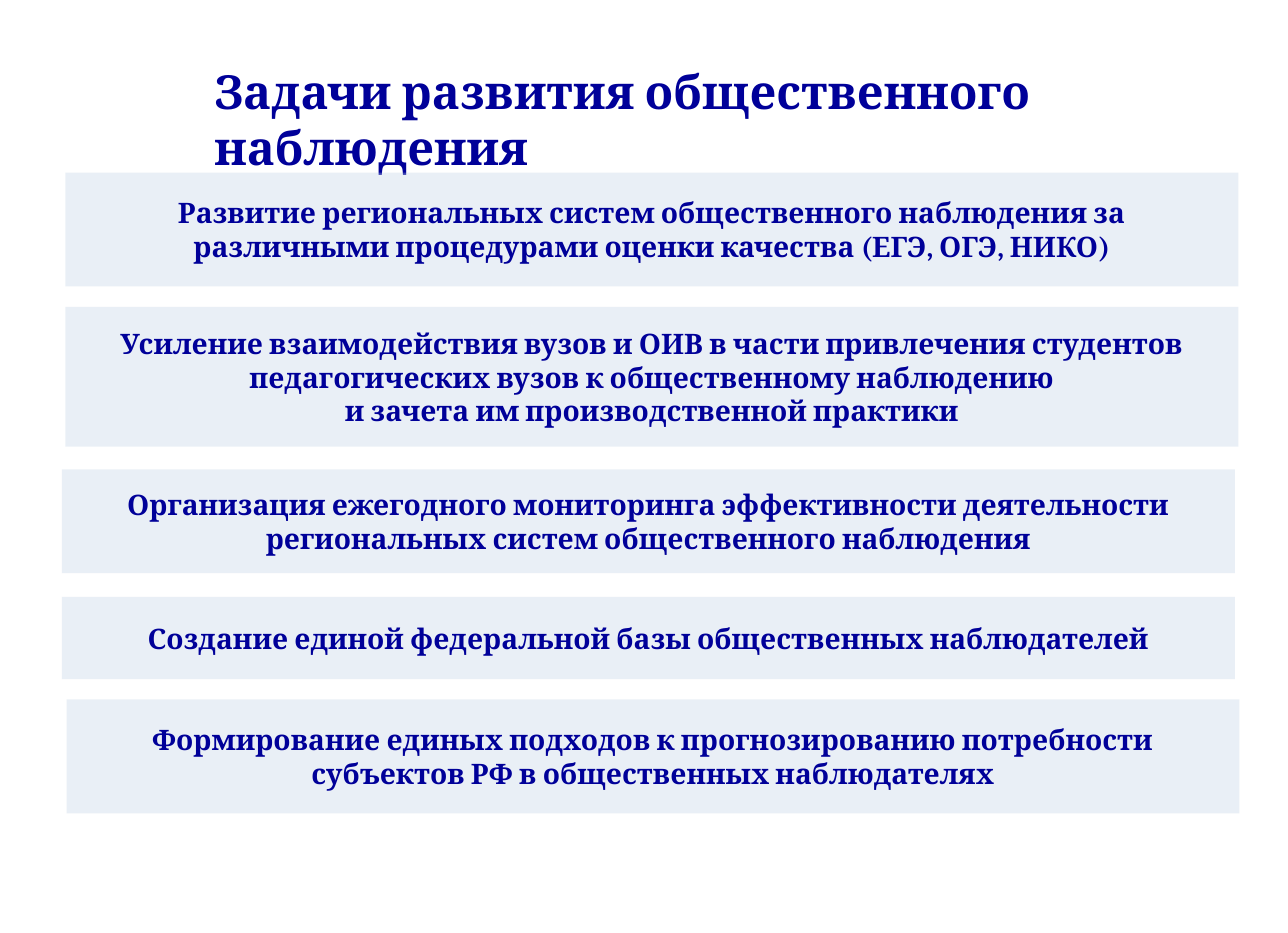
from dataclasses import dataclass

from lxml import etree
from pptx import Presentation
from pptx.dml.color import RGBColor
from pptx.enum.shapes import MSO_SHAPE
from pptx.enum.text import MSO_ANCHOR, MSO_AUTO_SIZE, PP_ALIGN
from pptx.oxml.ns import qn
from pptx.util import Inches, Pt

RECTANGLE = MSO_SHAPE.RECTANGLE
TOP, MIDDLE = MSO_ANCHOR.TOP, MSO_ANCHOR.MIDDLE
LEFT, CENTER = PP_ALIGN.LEFT, PP_ALIGN.CENTER
NO_AUTOFIT = MSO_AUTO_SIZE.NONE
TITLE_ONLY_LAYOUT = 5


@dataclass(frozen=True)
class Theme:
    font: str = "Cambria"
    text_color: RGBColor = RGBColor(0x00, 0x00, 0x99)
    panel_color: RGBColor = RGBColor(0xB9, 0xCD, 0xE5)
    panel_opacity: int = 31
    title_size: int = 30
    panel_size: int = 18
    side_inset: float = 0.13
    end_inset: float = 0.06


class SlideBuilder:
    def __init__(self, slide, theme):
        self.slide = slide
        self.theme = theme

    def set_text(self, shape, lines, size, alignment, anchor):
        """Fill a shape with one paragraph per line and return the runs."""
        theme = self.theme
        frame = shape.text_frame
        frame.word_wrap = True
        frame.auto_size = NO_AUTOFIT
        frame.vertical_anchor = anchor
        frame.margin_left = frame.margin_right = Inches(theme.side_inset)
        frame.margin_top = frame.margin_bottom = Inches(theme.end_inset)
        runs = []
        for index, line in enumerate(lines):
            paragraph = frame.add_paragraph() if index else frame.paragraphs[0]
            paragraph.alignment = alignment
            run = paragraph.add_run()
            run.text = line
            run.font.name = theme.font
            run.font.size = Pt(size)
            run.font.bold = True
            run.font.color.rgb = theme.text_color
            runs.append(run)
        return runs

    def add_text_shadow(self, run):
        fill = run._r.find(qn("a:rPr")).find(qn("a:solidFill"))
        effects = etree.Element(qn("a:effectLst"))
        shadow = etree.SubElement(
            effects, qn("a:outerShdw"),
            blurRad=str(int(Pt(3))), dist=str(int(Pt(3))),
            dir="2700000", algn="tl",
        )
        color = etree.SubElement(shadow, qn("a:srgbClr"), val="000000")
        etree.SubElement(color, qn("a:alpha"), val="43000")
        fill.addnext(effects)

    def add_title(self, text, left, top, width, height):
        title = self.slide.shapes.title
        title.left, title.top = Inches(left), Inches(top)
        title.width, title.height = Inches(width), Inches(height)
        for run in self.set_text(title, [text], self.theme.title_size, LEFT, TOP):
            self.add_text_shadow(run)

    def add_panel(self, lines, left, top, width, height):
        panel = self.slide.shapes.add_shape(
            RECTANGLE, Inches(left), Inches(top), Inches(width), Inches(height)
        )
        panel.shadow.inherit = False
        panel.line.fill.background()
        panel.fill.solid()
        panel.fill.fore_color.rgb = self.theme.panel_color
        color = panel._element.spPr.find(qn("a:solidFill"))[0]
        etree.SubElement(
            color, qn("a:alpha"), val=str(self.theme.panel_opacity * 1000)
        )
        self.set_text(panel, lines, self.theme.panel_size, CENTER, MIDDLE)


PANEL_WIDTH = 10.4
# Left, top, height and lines of each task
TASKS = [
    (0.58, 1.53, 1.01, [
        "Развитие региональных систем общественного наблюдения за "
        "различными процедурами оценки качества (ЕГЭ, ОГЭ, НИКО)",
    ]),
    (0.58, 2.72, 1.24, [
        "Усиление взаимодействия вузов и ОИВ в части привлечения студентов "
        "педагогических вузов к общественному наблюдению",
        "и зачета им производственной практики",
    ]),
    (0.55, 4.16, 0.92, [
        "Организация ежегодного мониторинга эффективности деятельности "
        "региональных систем общественного наблюдения",
    ]),
    (0.55, 5.29, 0.73, [
        "Создание единой федеральной базы общественных наблюдателей",
    ]),
    (0.59, 6.2, 1.01, [
        "Формирование единых подходов к прогнозированию потребности",
        "субъектов РФ в общественных наблюдателях",
    ]),
]


def main():
    presentation = Presentation()
    presentation.slide_width = Inches(11.42)
    presentation.slide_height = Inches(8.27)
    layout = presentation.slide_layouts[TITLE_ONLY_LAYOUT]
    builder = SlideBuilder(presentation.slides.add_slide(layout), Theme())

    builder.add_title(
        "Задачи развития общественного наблюдения", 1.77, 0.49, 9.59, 0.63
    )
    for left, top, height, lines in TASKS:
        builder.add_panel(lines, left, top, PANEL_WIDTH, height)

    presentation.save("out.pptx")


if __name__ == "__main__":
    main()
